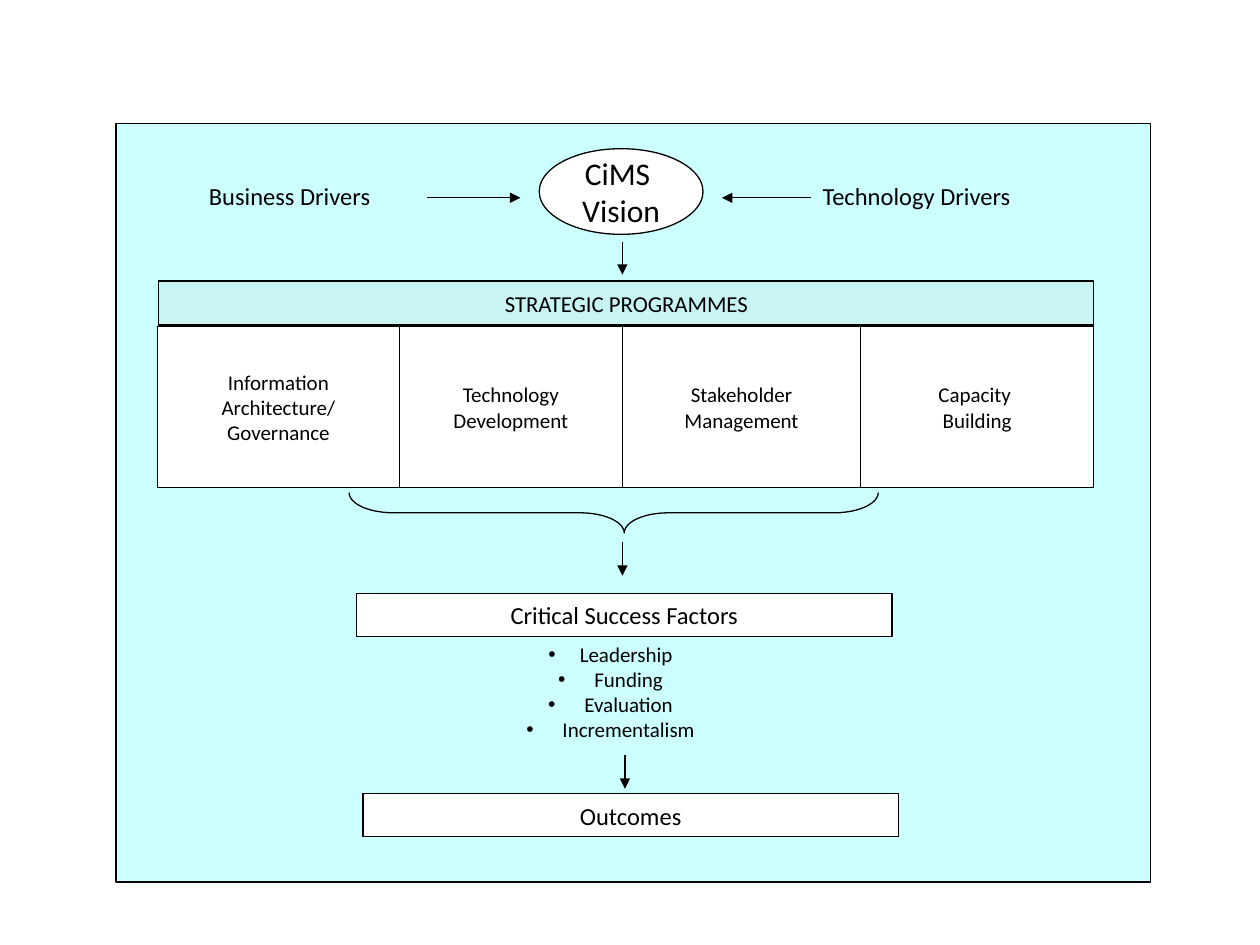
from dataclasses import dataclass

from lxml import etree
from pptx import Presentation
from pptx.dml.color import RGBColor
from pptx.enum.shapes import MSO_CONNECTOR, MSO_SHAPE
from pptx.enum.text import MSO_ANCHOR, PP_ALIGN
from pptx.oxml.ns import qn
from pptx.util import Inches, Pt

RECTANGLE = MSO_SHAPE.RECTANGLE
OVAL = MSO_SHAPE.OVAL
RIGHT_BRACE = MSO_SHAPE.RIGHT_BRACE
STRAIGHT = MSO_CONNECTOR.STRAIGHT
CENTER, LEFT = PP_ALIGN.CENTER, PP_ALIGN.LEFT
MIDDLE, TOP = MSO_ANCHOR.MIDDLE, MSO_ANCHOR.TOP


@dataclass(frozen=True)
class Theme:
    font: str = "Calibri"
    ink: RGBColor = RGBColor(0x00, 0x00, 0x00)
    paper: RGBColor = RGBColor(0xFF, 0xFF, 0xFF)
    panel: RGBColor = RGBColor(0xCC, 0xFF, 0xFF)
    band: RGBColor = RGBColor(0xC0, 0xC0, 0xC0)
    band_alpha: int = 17
    line_width: float = 0.75
    vision: int = 18
    heading: int = 14
    band_text: int = 13
    body: int = 12


THEME = Theme()
LIST_INDENT = 0.25
PROGRAMME_EDGES = [1.25, 3.17, 4.94, 6.83, 8.68]
PROGRAMMES = [
    ["Information", "Architecture/", "Governance"],
    ["Technology", "Development"],
    ["Stakeholder", "Management"],
    ["Capacity ", "Building"],
]
SUCCESS_FACTORS = ["Leadership", " Funding", " Evaluation", " Incrementalism"]
# Start and end points of the arrows
ARROWS = [
    ((3.39, 1.57), (4.13, 1.57)),
    ((6.44, 1.57), (5.73, 1.57)),
    ((4.94, 1.92), (4.94, 2.18)),
    ((4.94, 4.30), (4.94, 4.57)),
    ((4.96, 5.99), (4.96, 6.26)),
]


def add_bullet(para):
    properties = para._p.get_or_add_pPr()
    properties.set("marL", str(Inches(LIST_INDENT)))
    properties.set("indent", str(-Inches(LIST_INDENT)))
    etree.SubElement(properties, qn("a:buChar")).set("char", "•")


def write_text(frame, lines, size, align=CENTER, anchor=MIDDLE, wrap=False, bullets=False):
    frame.word_wrap = wrap
    frame.vertical_anchor = anchor
    for index, line in enumerate(lines):
        para = frame.paragraphs[0] if index == 0 else frame.add_paragraph()
        para.alignment = align
        para.space_before = Pt(0)
        if bullets:
            add_bullet(para)
        span = para.add_run()
        span.text = line
        span.font.size = Pt(size)
        span.font.name = THEME.font
        span.font.color.rgb = THEME.ink


def style_line(line):
    line.color.rgb = THEME.ink
    line.width = Pt(THEME.line_width)


def add_box(page, left, top, width, height, kind=RECTANGLE, fill=THEME.paper,
            lines=(), size=THEME.body):
    box = page.shapes.add_shape(kind, Inches(left), Inches(top), Inches(width), Inches(height))
    box.shadow.inherit = False
    if fill is None:
        box.fill.background()
    else:
        box.fill.solid()
        box.fill.fore_color.rgb = fill
    style_line(box.line)
    write_text(box.text_frame, lines, size)
    return box


def set_alpha(box, percent):
    color = box.fill._xPr.find(qn("a:solidFill"))[0]
    etree.SubElement(color, qn("a:alpha")).set("val", str(percent * 1000))


def add_label(page, left, top, width, height, text):
    label = page.shapes.add_textbox(Inches(left), Inches(top), Inches(width), Inches(height))
    write_text(label.text_frame, [text], THEME.heading, align=LEFT, anchor=TOP)


def add_arrow(page, start, end):
    points = [Inches(value) for value in (*start, *end)]
    arrow = page.shapes.add_connector(STRAIGHT, *points)
    style_line(arrow.line)
    etree.SubElement(arrow.line._get_or_add_ln(), qn("a:tailEnd")).set("type", "triangle")
    etree.SubElement(arrow._element.spPr, qn("a:effectLst"))


def add_brace(page):
    brace = add_box(page, 4.71, 1.97, 0.32, 4.2, kind=RIGHT_BRACE, fill=None)
    brace.rotation = 90
    brace.adjustments[0] = 1.1
    brace.adjustments[1] = 0.48


def add_factor_list(page):
    """Fill the body placeholder and bring it in front of the panel."""
    body = page.placeholders[1]
    body.left, body.top = Inches(2.79), Inches(5.09)
    body.width, body.height = Inches(4.29), Inches(0.8)
    frame = body.text_frame
    frame.margin_left = frame.margin_top = frame.margin_bottom = 0
    frame.margin_right = Inches(0.18)
    write_text(frame, SUCCESS_FACTORS, THEME.body, anchor=TOP, wrap=True, bullets=True)
    page.shapes._spTree.append(body._element)


def add_programmes(page):
    columns = zip(PROGRAMME_EDGES, PROGRAMME_EDGES[1:], PROGRAMMES)
    for left, right, lines in columns:
        add_box(page, left, 2.59, right - left, 1.28, lines=lines)
    band = add_box(page, 1.26, 2.23, 7.42, 0.35, fill=THEME.band,
                   lines=["STRATEGIC PROGRAMMES"], size=THEME.band_text)
    set_alpha(band, THEME.band_alpha)


def main():
    deck = Presentation()
    deck.slide_width, deck.slide_height = Inches(10), Inches(7.5)
    page = deck.slides.add_slide(deck.slide_layouts[1])
    title = page.shapes.title._element
    title.getparent().remove(title)

    add_box(page, 0.92, 0.98, 8.21, 6.02, fill=THEME.panel)
    add_box(page, 4.28, 1.18, 1.3, 0.68, kind=OVAL,
            lines=["CiMS ", "Vision"], size=THEME.vision)
    add_label(page, 1.56, 1.39, 1.5, 0.34, "Business Drivers")
    add_label(page, 6.43, 1.39, 1.73, 0.34, "Technology Drivers")
    add_programmes(page)
    add_brace(page)
    add_box(page, 2.83, 4.71, 4.25, 0.34,
            lines=["Critical Success Factors"], size=THEME.heading)
    add_factor_list(page)
    add_box(page, 2.88, 6.3, 4.25, 0.34, lines=["Outcomes"], size=THEME.heading)
    for start, end in ARROWS:
        add_arrow(page, start, end)
    deck.save("out.pptx")


if __name__ == "__main__":
    main()
